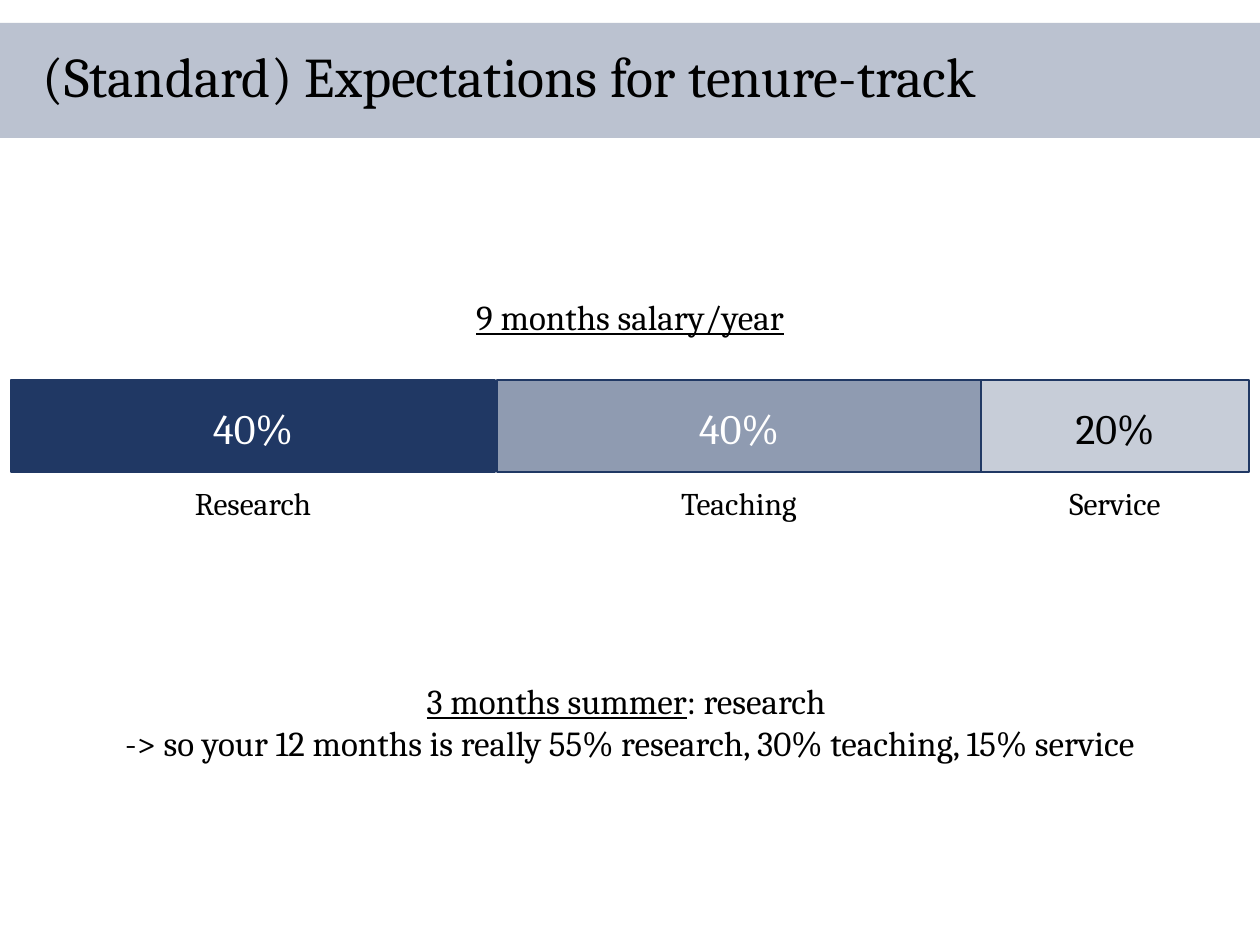
from lxml import etree
from pptx import Presentation
from pptx.dml.color import RGBColor
from pptx.enum.shapes import MSO_SHAPE
from pptx.enum.text import MSO_ANCHOR, PP_ALIGN
from pptx.oxml.ns import qn
from pptx.util import Pt

RECT = MSO_SHAPE.RECTANGLE
MIDDLE = MSO_ANCHOR.MIDDLE
LEFT, CENTER = PP_ALIGN.LEFT, PP_ALIGN.CENTER
SCALE = 914400 / 126
FONT = "Cambria"
NAVY, BLACK, WHITE = "203864", "000000", "FFFFFF"
EDGE, WIDE = 11, 1238
BARS = [
    ("Research", "40%", 11, 484, 100, WHITE),
    ("Teaching", "40%", 497, 484, 50, WHITE),
    ("Service", "20%", 981, 268, 25, BLACK),
]


def px(n):
    return round(n * SCALE)


def color(code):
    return RGBColor.from_string(code)


def add_rect(slide, x, y, w, h, alpha, line=None):
    rect = slide.shapes.add_shape(RECT, px(x), px(y), px(w), px(h))
    rect.shadow.inherit = False
    rect.fill.solid()
    rect.fill.fore_color.rgb = color(NAVY)
    if alpha < 100:
        tint = rect.element.spPr.find(qn("a:solidFill"))[0]
        etree.SubElement(tint, qn("a:alpha"), val=str(alpha * 1000))
    if line:
        rect.line.color.rgb = color(line)
        rect.line.width = Pt(1)
    else:
        rect.line.fill.background()
    return rect


def add_run(para, text, size, ink, under=False):
    run = para.add_run()
    run.text = text
    font = run.font
    font.name, font.size, font.underline = FONT, Pt(size), under
    font.color.rgb = color(ink)


def add_text(slide, x, y, w, h, lines, size, ink=BLACK):
    frame = slide.shapes.add_textbox(px(x), px(y), px(w), px(h)).text_frame
    frame.word_wrap = True
    for i, line in enumerate(lines):
        para = frame.add_paragraph() if i else frame.paragraphs[0]
        para.alignment = CENTER
        for text, under in line:
            add_run(para, text, size, ink, under)


def add_title(slide, text):
    title = slide.shapes.title
    title.left, title.top, title.width, title.height = map(px, (30, 23, 1230, 113))
    frame = title.text_frame
    frame.vertical_anchor = MIDDLE
    para = frame.paragraphs[0]
    para.alignment, para.line_spacing = LEFT, 0.9
    add_run(para, text, 32, BLACK)
    band = add_rect(slide, 0, 23, 1260, 115, 30)
    title.element.addprevious(band.element)


def add_bar(slide, name, share, x, w, alpha, ink):
    add_rect(slide, x, 380, w, 92, alpha, NAVY)
    add_text(slide, x, 478, w, 50, [[(name, False)]], 18)
    add_text(slide, x, 396, w, 63, [[(share, False)]], 24, ink)


def main():
    deck = Presentation()
    deck.slide_width, deck.slide_height = px(1260), px(945)
    slide = deck.slides.add_slide(deck.slide_layouts[5])
    add_title(slide, "(Standard) Expectations for tenure-track")
    for bar in BARS:
        add_bar(slide, *bar)
    add_text(slide, EDGE, 289, WIDE, 55, [[("9 months salary/year", True)]], 20)
    summer = [
        [("3 months summer", True), (": research ", False)],
        [("-> so your 12 months is really 55% research, 30% teaching, 15% service", False)],
    ]
    add_text(slide, EDGE, 673, WIDE, 97, summer, 20)
    deck.save("out.pptx")


if __name__ == "__main__":
    main()
